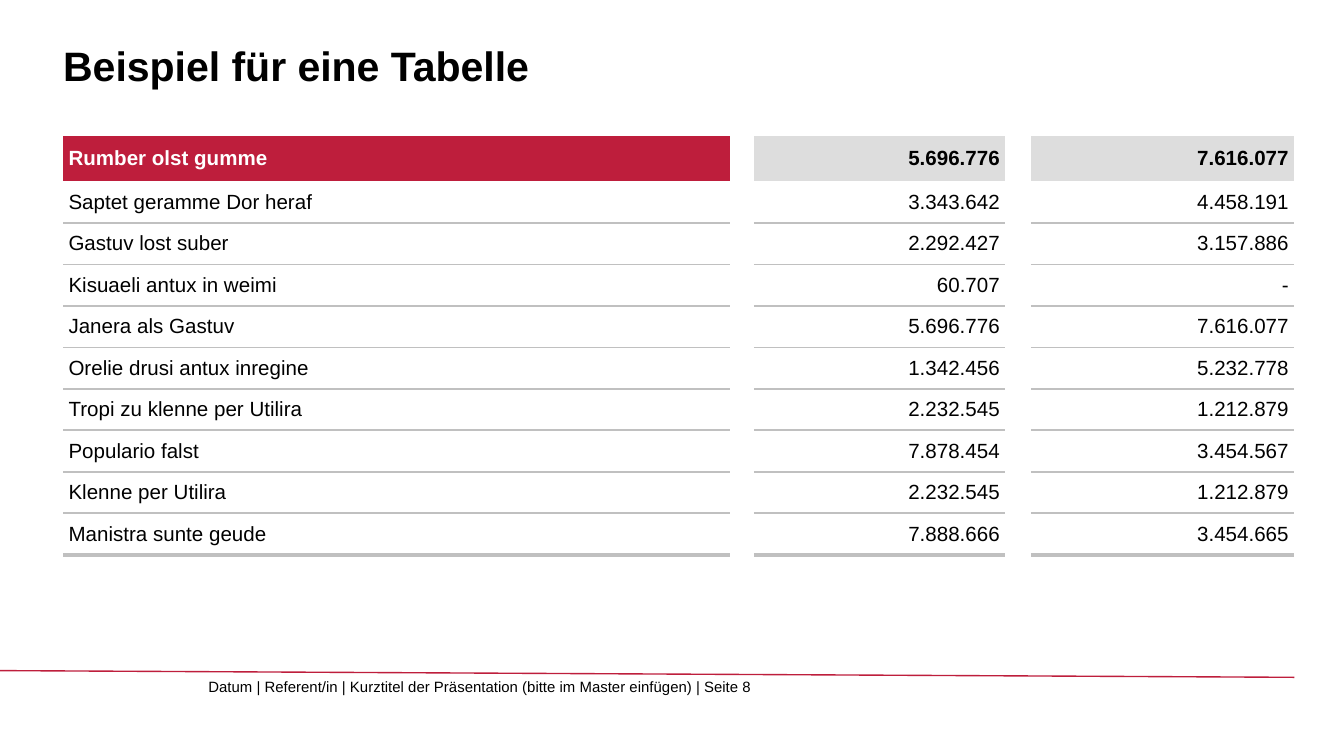
import pptx
import pptx.dml.color
import pptx.enum.shapes
import pptx.enum.text
import pptx.oxml.ns
import pptx.util
from lxml import etree

Inches, Pt = pptx.util.Inches, pptx.util.Pt
ANCHOR, ALIGN = pptx.enum.text.MSO_ANCHOR, pptx.enum.text.PP_ALIGN
qn = pptx.oxml.ns.qn

SLIDE_WIDTH = 10
SLIDE_HEIGHT = SLIDE_WIDTH * 9 / 16
LEFT, RIGHT = 0.47, 9.63
CONTENT_WIDTH = RIGHT - LEFT
TABLE_TOP, TABLE_HEIGHT, HEADER_HEIGHT = 1.01, 3.12, 0.34
COLUMN_WEIGHTS = [496, 18, 187, 19, 196]
VALUE_COLUMNS = (0, 2, 4)
FONT = "Arial"
PLAIN_TABLE_STYLE = "{2D5ABB26-0587-4C30-8999-92F81FD0307C}"
COLORS = {
    "red": "BE1E3C",
    "header_gray": "DDDDDD",
    "rule_gray": "C0C0C0",
    "black": "000000",
    "white": "FFFFFF",
}
TABLE_ROWS = [
    ("Rumber olst gumme", "5.696.776", "7.616.077"),
    ("Saptet geramme Dor heraf", "3.343.642", "4.458.191"),
    ("Gastuv lost suber", "2.292.427", "3.157.886"),
    ("Kisuaeli antux in weimi", "60.707", "-"),
    ("Janera als Gastuv", "5.696.776", "7.616.077"),
    ("Orelie drusi antux inregine", "1.342.456", "5.232.778"),
    ("Tropi zu klenne per Utilira", "2.232.545", "1.212.879"),
    ("Populario falst", "7.878.454", "3.454.567"),
    ("Klenne per Utilira", "2.232.545", "1.212.879"),
    ("Manistra sunte geude", "7.888.666", "3.454.665"),
]


def rgb(color):
    return pptx.dml.color.RGBColor.from_string(COLORS[color])


def apply(target, **values):
    for attribute, value in values.items():
        setattr(target, attribute, value)


def write(frame, text, size, color="black", bold=False, align=ALIGN.LEFT):
    paragraph = frame.paragraphs[0]
    paragraph.alignment = align
    run = paragraph.add_run()
    run.text = text
    apply(run.font, name=FONT, size=Pt(size), bold=bold)
    run.font.color.rgb = rgb(color)


def add_title(slide, text):
    title = slide.shapes.title
    apply(title, left=Inches(LEFT), top=Inches(0.09),
          width=Inches(CONTENT_WIDTH), height=Inches(0.58))
    apply(title.text_frame, margin_left=0, margin_top=0, margin_right=0,
          margin_bottom=0, vertical_anchor=ANCHOR.BOTTOM, word_wrap=True,
          auto_size=pptx.enum.text.MSO_AUTO_SIZE.NONE)
    write(title.text_frame, text, 22, bold=True)


def add_border(cell, side, width):
    """Draw one cell border; side is lnT or lnB, added before the fill."""
    line = etree.SubElement(cell._tc.get_or_add_tcPr(), qn(f"a:{side}"),
                            w=str(Pt(width)))
    fill = etree.SubElement(line, qn("a:solidFill"))
    etree.SubElement(fill, qn("a:srgbClr"), val=COLORS["rule_gray"])


def format_cell(cell, is_number_in_body=False):
    apply(cell, margin_left=Inches(0 if is_number_in_body else 0.04),
          margin_right=Inches(0.04), margin_top=Inches(0.03),
          margin_bottom=Inches(0.03), vertical_anchor=ANCHOR.MIDDLE)


def fill_header_cell(cell, text, is_label):
    format_cell(cell)
    cell.fill.solid()
    cell.fill.fore_color.rgb = rgb("red" if is_label else "header_gray")
    write(cell.text_frame, text, 11, "white" if is_label else "black", True,
          ALIGN.LEFT if is_label else ALIGN.RIGHT)


def fill_body_cell(cell, text, is_label, is_first, is_last):
    format_cell(cell, is_number_in_body=not is_label)
    if not is_first:
        add_border(cell, "lnT", 1)
    add_border(cell, "lnB", 2.25 if is_last else 1)
    cell.fill.background()
    write(cell.text_frame, text, 11,
          align=ALIGN.LEFT if is_label else ALIGN.RIGHT)


def clear_gap_cell(cell):
    """Keep an empty cell low enough not to stretch its row."""
    format_cell(cell)
    cell.fill.background()
    etree.SubElement(cell.text_frame.paragraphs[0]._p, qn("a:endParaRPr"),
                     sz="1100")


def add_figures_table(slide):
    last = len(TABLE_ROWS) - 1
    table = slide.shapes.add_table(
        len(TABLE_ROWS), len(COLUMN_WEIGHTS), Inches(LEFT), Inches(TABLE_TOP),
        Inches(CONTENT_WIDTH), Inches(TABLE_HEIGHT)).table
    apply(table, first_row=False, horz_banding=False)
    table._tbl.tblPr.find(qn("a:tableStyleId")).text = PLAIN_TABLE_STYLE
    for column, weight in zip(table.columns, COLUMN_WEIGHTS):
        column.width = Inches(CONTENT_WIDTH * weight / sum(COLUMN_WEIGHTS))
    body_height = (TABLE_HEIGHT - HEADER_HEIGHT) / last
    for row_index, texts in enumerate(TABLE_ROWS):
        row = table.rows[row_index]
        row.height = Inches(body_height if row_index else HEADER_HEIGHT)
        for column_index, cell in enumerate(row.cells):
            is_label = column_index == 0
            if column_index not in VALUE_COLUMNS:
                clear_gap_cell(cell)
                continue
            text = texts[VALUE_COLUMNS.index(column_index)]
            if row_index == 0:
                fill_header_cell(cell, text, is_label)
            else:
                fill_body_cell(cell, text, is_label,
                               row_index == 1, row_index == last)


def add_footer_rule(slide):
    rule = slide.shapes.add_connector(
        pptx.enum.shapes.MSO_CONNECTOR.STRAIGHT,
        0, Inches(4.99), Inches(RIGHT), Inches(5.04))
    rule.line.width = Pt(0.75)
    rule.line.color.rgb = rgb("red")
    etree.SubElement(rule._element.spPr, qn("a:effectLst"))


def add_footer(slide, text):
    footer = slide.shapes.add_textbox(Inches(1.55), Inches(5.04),
                                      Inches(4.87), Inches(0.27))
    apply(footer.text_frame, margin_left=0, margin_top=0, margin_right=0,
          margin_bottom=0, word_wrap=True)
    write(footer.text_frame, text, 8)


def main():
    deck = pptx.Presentation()
    apply(deck, slide_width=Inches(SLIDE_WIDTH),
          slide_height=Inches(SLIDE_HEIGHT))
    slide = deck.slides.add_slide(deck.slide_layouts.get_by_name("Title Only"))
    add_footer_rule(slide)
    add_footer(slide, "Datum | Referent/in | Kurztitel der Präsentation "
                      "(bitte im Master einfügen) | Seite 8")
    add_title(slide, "Beispiel für eine Tabelle")
    add_figures_table(slide)
    deck.save("out.pptx")


if __name__ == "__main__":
    main()
